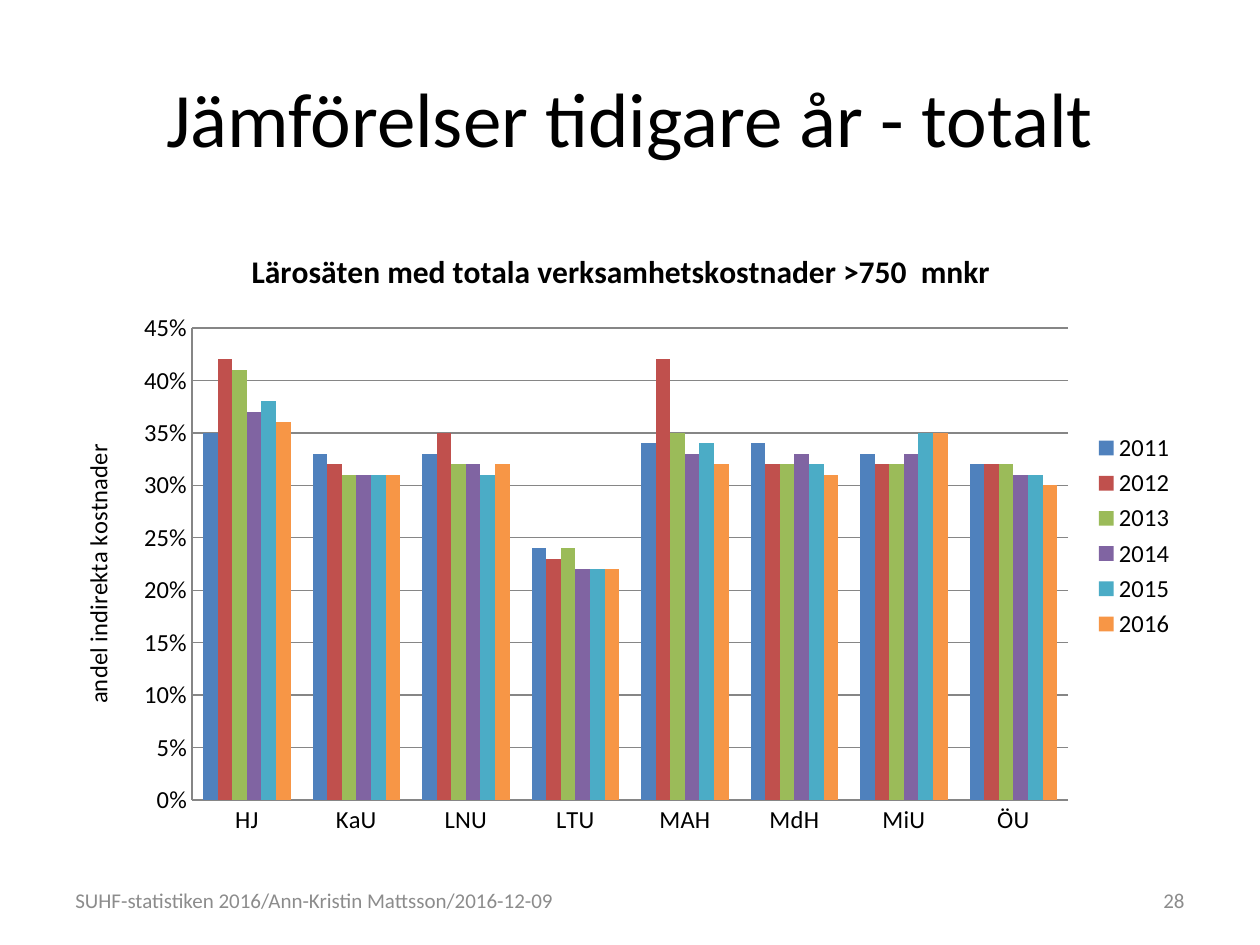
from dataclasses import dataclass
from typing import Any

from pptx import Presentation
from pptx import util as u
from pptx.chart.data import CategoryChartData
from pptx.dml.color import RGBColor
from pptx.enum import chart as charts, text

BLACK = RGBColor(0x00, 0x00, 0x00)
GREY = RGBColor(0x8C, 0x8C, 0x8C)
LINE_GREY = RGBColor(0x86, 0x86, 0x86)
BLUE = RGBColor(0x4F, 0x81, 0xBD)
RED = RGBColor(0xC0, 0x50, 0x4D)
GREEN = RGBColor(0x9B, 0xBB, 0x59)
PURPLE = RGBColor(0x80, 0x64, 0xA2)
TEAL = RGBColor(0x4B, 0xAC, 0xC6)
ORANGE = RGBColor(0xF7, 0x96, 0x46)
FONT = "Calibri"


@dataclass(frozen=True)
class Year:
    name: str
    shares: tuple[float, ...]
    color: RGBColor


@dataclass(frozen=True)
class FooterItem:
    wording: str
    left: float
    width: float
    alignment: Any


UNIVERSITIES = ("HJ", "KaU", "LNU", "LTU", "MAH", "MdH", "MiU", "ÖU")
YEARS = (
    Year("2011", (0.35, 0.33, 0.33, 0.24, 0.34, 0.34, 0.33, 0.32), BLUE),
    Year("2012", (0.42, 0.32, 0.35, 0.23, 0.42, 0.32, 0.32, 0.32), RED),
    Year("2013", (0.41, 0.31, 0.32, 0.24, 0.35, 0.32, 0.32, 0.32), GREEN),
    Year("2014", (0.37, 0.31, 0.32, 0.22, 0.33, 0.33, 0.33, 0.31), PURPLE),
    Year("2015", (0.38, 0.31, 0.31, 0.22, 0.34, 0.32, 0.35, 0.31), TEAL),
    Year("2016", (0.36, 0.31, 0.32, 0.22, 0.32, 0.31, 0.35, 0.3), ORANGE),
)
FOOTER = (
    FooterItem("SUHF-statistiken 2016/Ann-Kristin Mattsson/2016-12-09",
               1.27, 11.43, text.PP_ALIGN.LEFT),
    FooterItem("28", 18.21, 5.92, text.PP_ALIGN.RIGHT),
)


def apply(target: Any, values: dict[str, Any]) -> None:
    for name, value in values.items():
        setattr(target, name, value)


def style_font(font: Any, size: float, color: RGBColor = BLACK, bold: bool = False) -> None:
    apply(font, {"name": FONT, "size": u.Pt(size), "bold": bold})
    font.color.rgb = color


def fill_frame(frame: Any, wording: str, size: float, color: RGBColor, alignment: Any) -> None:
    apply(frame, {"word_wrap": True, "vertical_anchor": text.MSO_ANCHOR.MIDDLE})
    paragraph = frame.paragraphs[0]
    paragraph.alignment = alignment
    run = paragraph.add_run()
    run.text = wording
    style_font(run.font, size, color)


def add_title(slide: Any, wording: str) -> None:
    title = slide.shapes.title
    apply(title, {"left": u.Cm(1.27), "top": u.Cm(0.76),
                  "width": u.Cm(22.86), "height": u.Cm(3.18)})
    fill_frame(title.text_frame, wording, 44, BLACK, text.PP_ALIGN.CENTER)


def add_footer_item(slide: Any, item: FooterItem) -> None:
    box = slide.shapes.add_textbox(u.Cm(item.left), u.Cm(17.65), u.Cm(item.width), u.Cm(1.01))
    fill_frame(box.text_frame, item.wording, 12, GREY, item.alignment)


def set_heading(owner: Any, heading: Any, wording: str, size: float, bold: bool) -> None:
    """Write the heading of a chart or of an axis."""
    owner.has_title = True
    frame = heading.text_frame
    frame.text = wording
    style_font(frame.paragraphs[0].runs[0].font, size, bold=bold)


def style_line(line: Any) -> None:
    line.color.rgb = LINE_GREY
    line.width = u.Pt(0.75)


def add_cost_chart(slide: Any) -> None:
    chart_data = CategoryChartData(number_format="0%")
    chart_data.categories = UNIVERSITIES
    for year in YEARS:
        chart_data.add_series(year.name, year.shares)
    chart = slide.shapes.add_chart(
        charts.XL_CHART_TYPE.COLUMN_CLUSTERED,
        u.Cm(1.09), u.Cm(4.52), u.Cm(22.86), u.Cm(12.57), chart_data).chart
    style_font(chart.font, 10)
    set_heading(chart, chart.chart_title,
                "Lärosäten med totala verksamhetskostnader >750  mnkr", 18, True)
    chart.chart_title.include_in_layout = False

    plot = chart.plots[0]
    apply(plot, {"gap_width": 150, "overlap": 0, "vary_by_categories": False})
    for series, year in zip(plot.series, YEARS):
        series.format.fill.solid()
        series.format.fill.fore_color.rgb = year.color
        series.invert_if_negative = False

    for axis in (chart.category_axis, chart.value_axis):
        apply(axis, {"major_tick_mark": charts.XL_TICK_MARK.NONE,
                     "minor_tick_mark": charts.XL_TICK_MARK.NONE})
        style_font(axis.tick_labels.font, 14)
        style_line(axis.format.line)
    value_axis = chart.value_axis
    apply(value_axis, {"minimum_scale": 0, "maximum_scale": 0.45, "major_unit": 0.05,
                       "has_major_gridlines": True})
    style_line(value_axis.major_gridlines.format.line)
    apply(value_axis.tick_labels, {"number_format": "0%", "number_format_is_linked": False})
    set_heading(value_axis, value_axis.axis_title, "andel indirekta kostnader", 14, False)

    chart.has_legend = True
    apply(chart.legend, {"position": charts.XL_LEGEND_POSITION.RIGHT,
                         "include_in_layout": False})
    style_font(chart.legend.font, 14)


def main() -> None:
    presentation = Presentation()
    apply(presentation, {"slide_width": u.Cm(25.4), "slide_height": u.Cm(19.05)})
    slide = presentation.slides.add_slide(presentation.slide_layouts[5])
    add_title(slide, "Jämförelser tidigare år - totalt")
    for item in FOOTER:
        add_footer_item(slide, item)
    add_cost_chart(slide)
    presentation.save("out.pptx")


if __name__ == "__main__":
    main()
